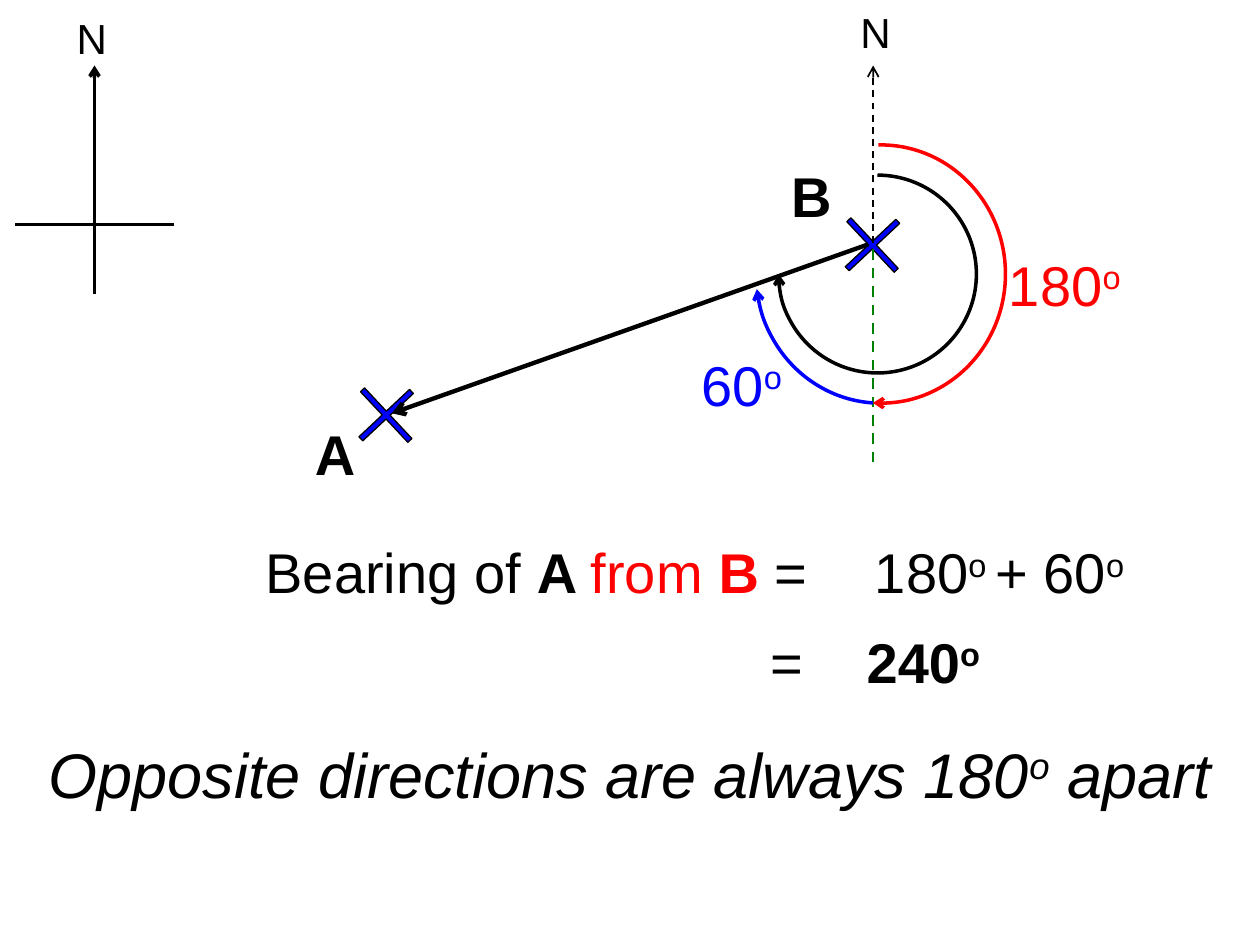
"""Build a slide that works out the bearing of A from B."""
from lxml import etree
from pptx import Presentation
from pptx import util as u
from pptx.dml.color import RGBColor
from pptx.enum import dml, shapes, text
from pptx.oxml.ns import qn

COLS, ROWS = 100, 75
CELL = u.Inches(0.1)
COLORS = {"black": "000000", "red": "FF0000", "blue": "0000FF", "green": "008000"}
SUP = {"baseline": 30000}
BOLD = {"bold": True}


def grid(*cells):
    return [u.Emu(round(c * CELL)) for c in cells]


def rgb(name):
    return RGBColor.from_string(COLORS[name])


def set_line(sp, color, width, dash=False, head=False, tail=False):
    sp.line.color.rgb = rgb(color)
    sp.line.width = u.Pt(width)
    if dash:
        sp.line.dash_style = dml.MSO_LINE.DASH
    ln = sp.line._get_or_add_ln()
    for tag, wanted in (("a:headEnd", head), ("a:tailEnd", tail)):
        if wanted:
            etree.SubElement(ln, qn(tag), type="arrow")


def add_line(s, start, end, color="black", width=2, **ends):
    sp = s.shapes.add_connector(shapes.MSO_CONNECTOR.STRAIGHT, *grid(*start, *end))
    set_line(sp, color, width, **ends)
    etree.SubElement(sp._element.spPr, qn("a:effectLst"))


def add_arc(s, center, radii, start, end, color):
    (cx, cy), (rx, ry) = center, radii
    sp = s.shapes.add_shape(shapes.MSO_SHAPE.ARC,
                            *grid(cx - rx, cy - ry, 2 * rx, 2 * ry))
    sp.shadow.inherit = False
    sp.adjustments[0], sp.adjustments[1] = start * 0.6, end * 0.6
    sp.fill.background()
    set_line(sp, color, 2, tail=True)


def add_cross(s, x, y, size=5.5):
    sp = s.shapes.add_shape(shapes.MSO_SHAPE.CROSS, *grid(x, y, size, size))
    sp.shadow.inherit = False
    sp.adjustments[0] = 0.46
    sp.rotation = 46.9
    sp.fill.solid()
    sp.fill.fore_color.rgb = rgb("blue")
    set_line(sp, "black", 0.75)


def add_text(s, box, *runs, size=32, color="black", bold=False, italic=False,
             align=text.PP_ALIGN.LEFT, tab=None):
    tf = s.shapes.add_textbox(*grid(*box)).text_frame
    tf.word_wrap = True
    tf.auto_size = text.MSO_AUTO_SIZE.SHAPE_TO_FIT_TEXT
    p = tf.paragraphs[0]
    p.alignment = align
    if tab:
        tabs = etree.SubElement(p._p.get_or_add_pPr(), qn("a:tabLst"))
        etree.SubElement(tabs, qn("a:tab"), pos=str(grid(tab)[0]), algn="l")
    for run in runs:
        words, fmt = (run, {}) if isinstance(run, str) else run
        r = p.add_run()
        r.text = words
        r.font.name = "Arial"
        r.font.size = u.Pt(size)
        r.font.bold = fmt.get("bold", bold)
        r.font.italic = italic
        r.font.color.rgb = rgb(fmt.get("color", color))
        if "baseline" in fmt:
            r.font._element.set("baseline", str(fmt["baseline"]))


def add_compass(s):
    add_line(s, (1.2, 17.8), (13.8, 17.8))
    add_line(s, (7.5, 23.3), (7.5, 5.2), tail=True)
    add_text(s, (5.1, 0.5, 4.7, 5), "N", size=24)


def add_diagram(s):
    north_x = 69.3
    add_cross(s, 27.9, 30.2)
    add_cross(s, 66.5, 16.7)
    add_line(s, (north_x, 36.7), (north_x, 19.5), "green", 1.5, dash=True)
    add_line(s, (31.1, 32.8), (68.9, 19.4), width=2.5, head=True)
    add_line(s, (north_x, 19.3), (north_x, 5.2), width=1, dash=True, tail=True)
    add_arc(s, (69.65, 21.75), (7.85, 7.85), 270, 180, "black")
    outer = (69.9, 21.75), (9.9, 10.25)
    add_arc(s, *outer, 269, 93.5, "red")
    add_arc(s, *outer, 93.5, 173, "blue")
    add_text(s, (67.3, 0, 4.7, 5), "N", size=24)
    add_text(s, (24, 32.8, 8.7, 6.3), "A", bold=True)
    add_text(s, (61.8, 12.3, 8.7, 6.3), "B", bold=True)
    add_text(s, (54.7, 27.3, 8.7, 6.3), "60", ("o", SUP), color="blue")
    add_text(s, (79.1, 19.4, 12.6, 6.3), "180", ("o", SUP), color="red")


def add_working(s):
    row = (20.1, 42.2, 70.1, 6.4)
    add_text(s, row, "Bearing of ", ("A ", BOLD), ("from ", {"color": "red"}),
             ("B", {"color": "red", **BOLD}), " =")
    add_text(s, row, "180", ("o ", SUP), "+ 60", ("o", SUP),
             align=text.PP_ALIGN.RIGHT)
    add_text(s, (60.2, 49.3, 29.9, 6.3), "=\t", ("240", BOLD),
             ("o", {**SUP, **BOLD}), tab=7.6)
    add_text(s, (0, 57.9, COLS, 7.1), "Opposite directions are always 180",
             ("o", SUP), " apart", size=36, italic=True,
             align=text.PP_ALIGN.CENTER)


def main():
    prs = Presentation()
    prs.slide_width, prs.slide_height = grid(COLS, ROWS)
    s = prs.slides.add_slide(prs.slide_layouts[6])
    add_compass(s)
    add_diagram(s)
    add_working(s)
    prs.save("out.pptx")


if __name__ == "__main__":
    main()
